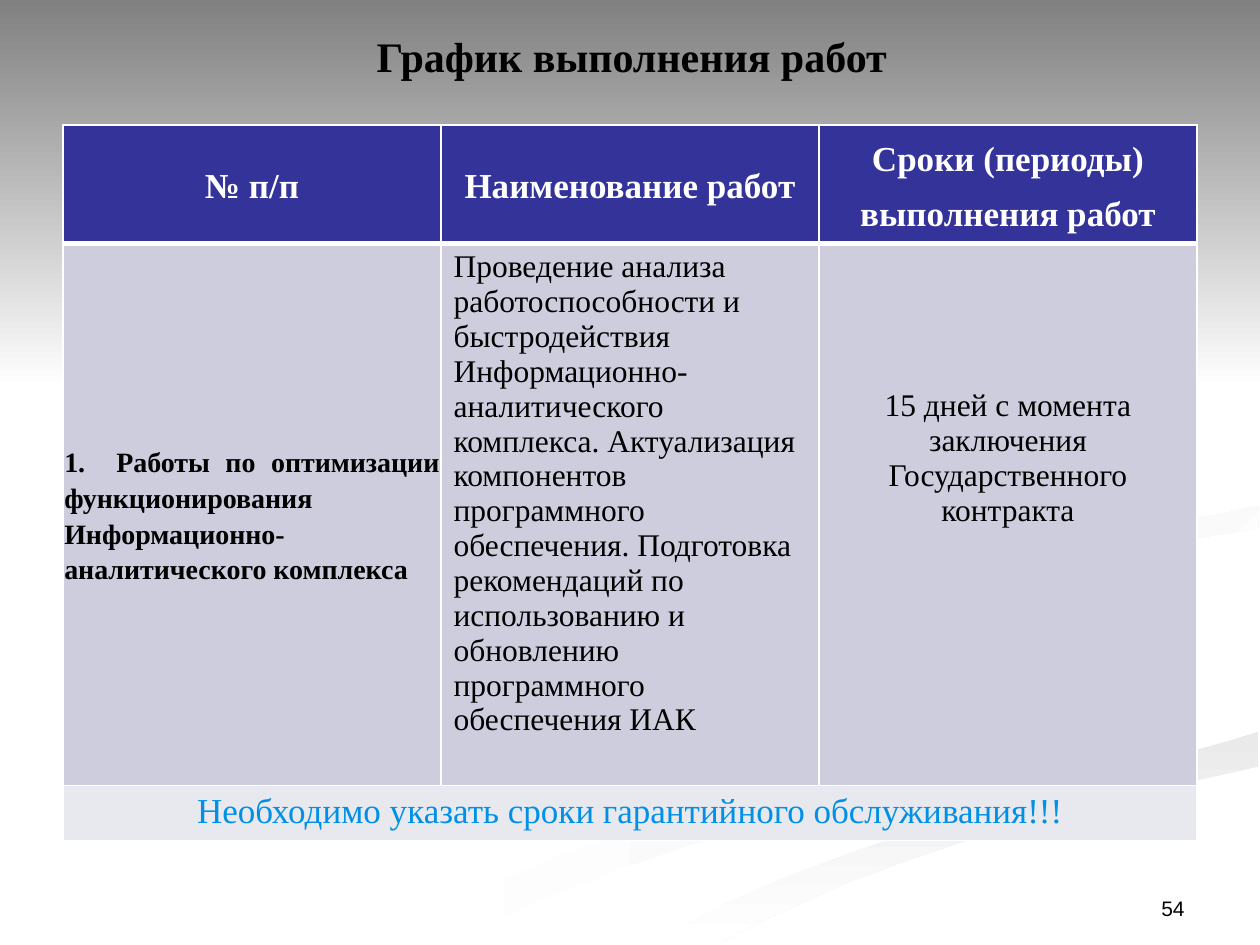
from lxml.etree import SubElement
from pptx import Presentation
from pptx.dml.color import RGBColor
from pptx.enum.shapes import MSO_SHAPE
from pptx.enum.text import MSO_ANCHOR, PP_ALIGN
from pptx.oxml.ns import qn
from pptx.util import Pt

THEME = {
    "serif": "Times New Roman", "sans": "Arial",
    "black": "000000", "white": "FFFFFF", "sky": "808080",
    "header": "333399", "body": "CDCDDE", "footer": "E8E8EF", "accent": "0090E5",
    "ribbon_pale": "F5F5F5", "ribbon_mid": "EAEAEA", "ribbon_light": "F1F1F1",
    "title": 24, "large": 20, "text": 18, "label": 16, "number": 12,
}


def write(frame, lines, font, size, color, bold=False, align=PP_ALIGN.LEFT):
    frame.word_wrap = True
    frame.text = "\n".join(lines)
    for paragraph in frame.paragraphs:
        paragraph.alignment = align
        paragraph.font.name = THEME[font]
        paragraph.font.size = Pt(THEME[size])
        paragraph.font.bold = bold
        paragraph.font.color.rgb = RGBColor.from_string(THEME[color])


def paint(shape, start, end, angle):
    shape.shadow.inherit = False
    shape.line.fill.background()
    if start == end:
        shape.fill.solid()
        shape.fill.fore_color.rgb = RGBColor.from_string(THEME[start])
        return
    shape.fill.gradient()
    shape.fill.gradient_angle = -angle % 360
    for stop, color in zip(shape.fill.gradient_stops, (start, end)):
        stop.color.rgb = RGBColor.from_string(THEME[color])


presentation = Presentation()
presentation.slide_width = Pt(720)
presentation.slide_height = Pt(540)
slide = presentation.slides.add_slide(presentation.slide_layouts[6])

ribbons = [
    ("white", "ribbon_pale", 0, [
        (562, 398), (516, 380), (475, 369), (442, 357), (423, 346), (414, 336), (414, 330),
        (410, 337), (412, 343), (422, 351), (440, 359), (489, 374), (524, 385), (554, 397),
        (566, 410), (558, 420), (539, 428), (503, 438), (444, 453), (388, 467), (330, 485),
        (271, 509), (216, 539), (260, 539), (310, 514), (359, 495), (406, 479), (449, 466),
        (503, 452), (544, 442), (566, 433), (575, 422), (576, 418), (573, 408)]),
    ("ribbon_mid", "white", 90, [
        (374, 538), (362, 539), (411, 539), (432, 528), (454, 518), (482, 505), (520, 491),
        (565, 476), (620, 461), (683, 446), (719, 438), (719, 418), (703, 423), (674, 431),
        (624, 444), (574, 457), (550, 466), (501, 482), (454, 499), (410, 518)]),
    ("white", "white", 0, [
        (522, 334), (526, 345), (546, 359), (571, 366), (613, 377), (652, 389), (670, 398),
        (679, 410), (674, 423), (656, 432), (634, 440), (585, 450), (535, 463), (477, 481),
        (413, 506), (343, 539), (362, 539), (374, 538), (410, 518), (454, 499), (501, 482),
        (551, 466), (574, 457), (625, 444), (674, 431), (703, 423), (719, 418), (719, 387),
        (690, 382), (651, 374), (611, 362), (579, 349), (564, 338), (563, 331), (570, 322),
        (584, 315), (612, 307), (647, 301), (697, 294), (719, 289), (719, 279), (678, 287),
        (629, 294), (582, 300), (544, 311), (527, 321)]),
    ("ribbon_light", "white", 45, [
        (562, 331), (563, 338), (569, 344), (580, 351), (595, 357), (582, 348), (580, 340),
        (588, 330), (607, 323), (645, 313), (687, 307), (719, 302), (719, 289), (696, 294),
        (647, 301), (611, 307), (583, 315), (569, 322)]),
]
for start, end, angle, points in ribbons:
    builder = slide.shapes.build_freeform(*points[0], scale=Pt(1))
    builder.add_line_segments(points[1:], close=True)
    paint(builder.convert_to_shape(), start, end, angle)

sky = slide.shapes.add_shape(MSO_SHAPE.RECTANGLE, 0, 0, Pt(720), Pt(222))
paint(sky, "sky", "white", 90)

title = slide.shapes.add_textbox(Pt(37), Pt(9.5), Pt(648), Pt(44.5))
title.text_frame.vertical_anchor = MSO_ANCHOR.MIDDLE
write(title.text_frame, ["График выполнения работ"], "serif", "title", "black", True, PP_ALIGN.CENTER)

table = slide.shapes.add_table(3, 3, Pt(36), Pt(71.5), Pt(648), Pt(408.5)).table
for row, height in zip(table.rows, (67.5, 310, 31)):
    row.height = Pt(height)
table.cell(2, 0).merge(table.cell(2, 2))

for row_index, fill in enumerate(("header", "body", "footer")):
    for column_index in range(3):
        cell = table.cell(row_index, column_index)
        properties = cell._tc.get_or_add_tcPr()
        widths = {"a:lnL": 1, "a:lnR": 1, "a:lnT": 3 if row_index == 1 else 1,
                  "a:lnB": 3 if row_index == 0 else 1}
        for tag, width in widths.items():
            border = SubElement(properties, qn(tag), w=str(Pt(width)))
            border_fill = SubElement(border, qn("a:solidFill"))
            SubElement(border_fill, qn("a:srgbClr"), val=THEME["white"])
        cell.fill.solid()
        cell.fill.fore_color.rgb = RGBColor.from_string(THEME[fill])

headings = [["№ п/п"], ["Наименование работ"], ["Сроки (периоды)", "выполнения работ"]]
for column_index, lines in enumerate(headings):
    write(table.cell(0, column_index).text_frame, lines, "serif", "large", "white", True, PP_ALIGN.CENTER)

work, description, period = (table.cell(1, column_index) for column_index in range(3))
write(work.text_frame,
      ["1.  Работы по оптимизации функционирования Информационно-аналитического комплекса"],
      "serif", "label", "black", True, PP_ALIGN.JUSTIFY)
write(description.text_frame,
      ["Проведение анализа работоспособности и быстродействия Информационно-аналитического "
       "комплекса. Актуализация компонентов программного обеспечения. Подготовка рекомендаций "
       "по использованию и обновлению программного обеспечения ИАК"],
      "serif", "text", "black")
write(period.text_frame, ["15 дней с момента заключения Государственного контракта"],
      "serif", "text", "black", align=PP_ALIGN.CENTER)
period.margin_top = Pt(83)
write(table.cell(2, 0).text_frame, ["Необходимо указать сроки гарантийного обслуживания!!!"],
      "serif", "large", "accent", align=PP_ALIGN.CENTER)

for cell in [*(table.cell(0, column_index) for column_index in range(3)), work]:
    cell.vertical_anchor = MSO_ANCHOR.MIDDLE
    cell.margin_left = cell.margin_right = cell.margin_top = cell.margin_bottom = Pt(0.75)
    for paragraph in cell.text_frame.paragraphs:
        paragraph.line_spacing = 1.15
        paragraph.space_after = Pt(6)

number = slide.shapes.add_textbox(Pt(516), Pt(492), Pt(168), Pt(37.5))
number.text_frame.vertical_anchor = MSO_ANCHOR.BOTTOM
write(number.text_frame, ["54"], "sans", "number", "black", align=PP_ALIGN.RIGHT)

presentation.save("out.pptx")
